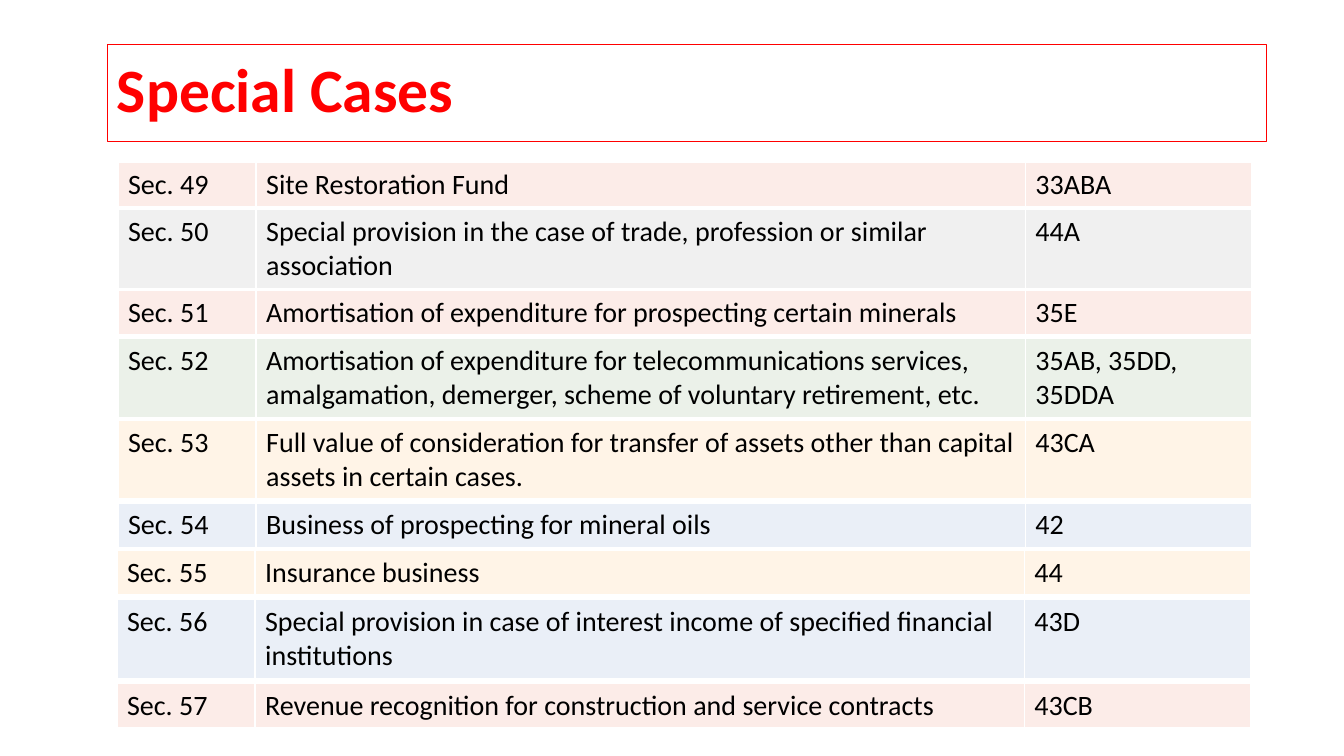
from lxml.etree import SubElement
from pptx import Presentation
from pptx.dml.color import RGBColor
from pptx.enum.text import MSO_ANCHOR, MSO_AUTO_SIZE, PP_ALIGN
from pptx.oxml.ns import qn
from pptx.util import Emu, Pt

EMU_PER_PX = 9144  # 100 px to the inch
FONT = "Calibri"
COLORS = {
    "red": "FF0000", "black": "000000", "white": "FFFFFF",
    "rose": "FCECE8", "grey": "F0F0F0", "green": "EBF1E9",
    "cream": "FFF4E7", "blue": "EAEFF7",
}
COLUMN_WIDTHS = (137, 763, 224)
ROW_HEIGHT = 41
FIRST_SECTION = 49
# left, top, fill, subject, earlier section
SECTIONS = [
    (117, 161, "rose", "Site Restoration Fund", "33ABA"),
    (117, 208, "grey", "Special provision in the case of trade, profession or "
     "similar association", "44A"),
    (117, 288, "rose", "Amortisation of expenditure for prospecting certain "
     "minerals", "35E"),
    (117, 336, "green", "Amortisation of expenditure for telecommunications "
     "services, amalgamation, demerger, scheme of voluntary retirement, etc.",
     "35AB, 35DD, 35DDA"),
    (117, 417, "cream", "Full value of consideration for transfer of assets "
     "other than capital assets in certain cases.", "43CA"),
    (117, 499, "blue", "Business of prospecting for mineral oils", "42"),
    (116, 546, "cream", "Insurance business", "44"),
    (116, 595, "blue", "Special provision in case of interest income of "
     "specified financial institutions", "43D"),
    (116, 678, "rose", "Revenue recognition for construction and service "
     "contracts", "43CB"),
]


def px(length):
    return Emu(length * EMU_PER_PX)


def color(name):
    return RGBColor.from_string(COLORS[name])


def add_run(paragraph, text, size, color_name, bold=False):
    run = paragraph.add_run()
    run.text = text
    font = run.font
    font.name, font.size, font.bold = FONT, Pt(size), bold
    font.color.rgb = color(color_name)


def set_title(slide, text):
    title = slide.shapes.title
    title.left, title.top = px(106), px(44)
    title.width, title.height = px(1150), px(96)
    title.line.color.rgb = color("red")
    title.line.width = Pt(0.25)
    frame = title.text_frame
    frame.auto_size = MSO_AUTO_SIZE.NONE
    frame.vertical_anchor = MSO_ANCHOR.MIDDLE
    heading = frame.paragraphs[0]
    heading.alignment = PP_ALIGN.LEFT
    heading.line_spacing = 0.9
    add_run(heading, text, 44, "red", bold=True)


def set_borders(cell):
    properties = cell._tc.get_or_add_tcPr()
    for position, side in enumerate(("lnL", "lnR", "lnT", "lnB")):
        border = SubElement(properties, qn(f"a:{side}"), w=str(Pt(1)))
        fill = SubElement(border, qn("a:solidFill"))
        SubElement(fill, qn("a:srgbClr"), val=COLORS["white"])
        properties.insert(position, border)


def add_section(slide, left, top, fill, texts):
    """Add one section as a table of a single row."""
    table = slide.shapes.add_table(
        1, len(texts), px(left), px(top),
        px(sum(COLUMN_WIDTHS)), px(ROW_HEIGHT)).table
    table.first_row = table.horz_banding = False
    for column, width in zip(table.columns, COLUMN_WIDTHS):
        column.width = px(width)
    for cell, text in zip(table.rows[0].cells, texts):
        cell.fill.solid()
        cell.fill.fore_color.rgb = color(fill)
        set_borders(cell)
        add_run(cell.text_frame.paragraphs[0], text, 20, "black")


def main():
    presentation = Presentation()
    presentation.slide_width, presentation.slide_height = px(1333), px(750)
    slide = presentation.slides.add_slide(presentation.slide_layouts.get_by_name("Title Only"))
    set_title(slide, "Special Cases")
    for number, section in enumerate(SECTIONS, FIRST_SECTION):
        left, top, fill, subject, earlier_section = section
        add_section(slide, left, top, fill,
                    (f"Sec. {number}", subject, earlier_section))
    presentation.save("out.pptx")


if __name__ == "__main__":
    main()
